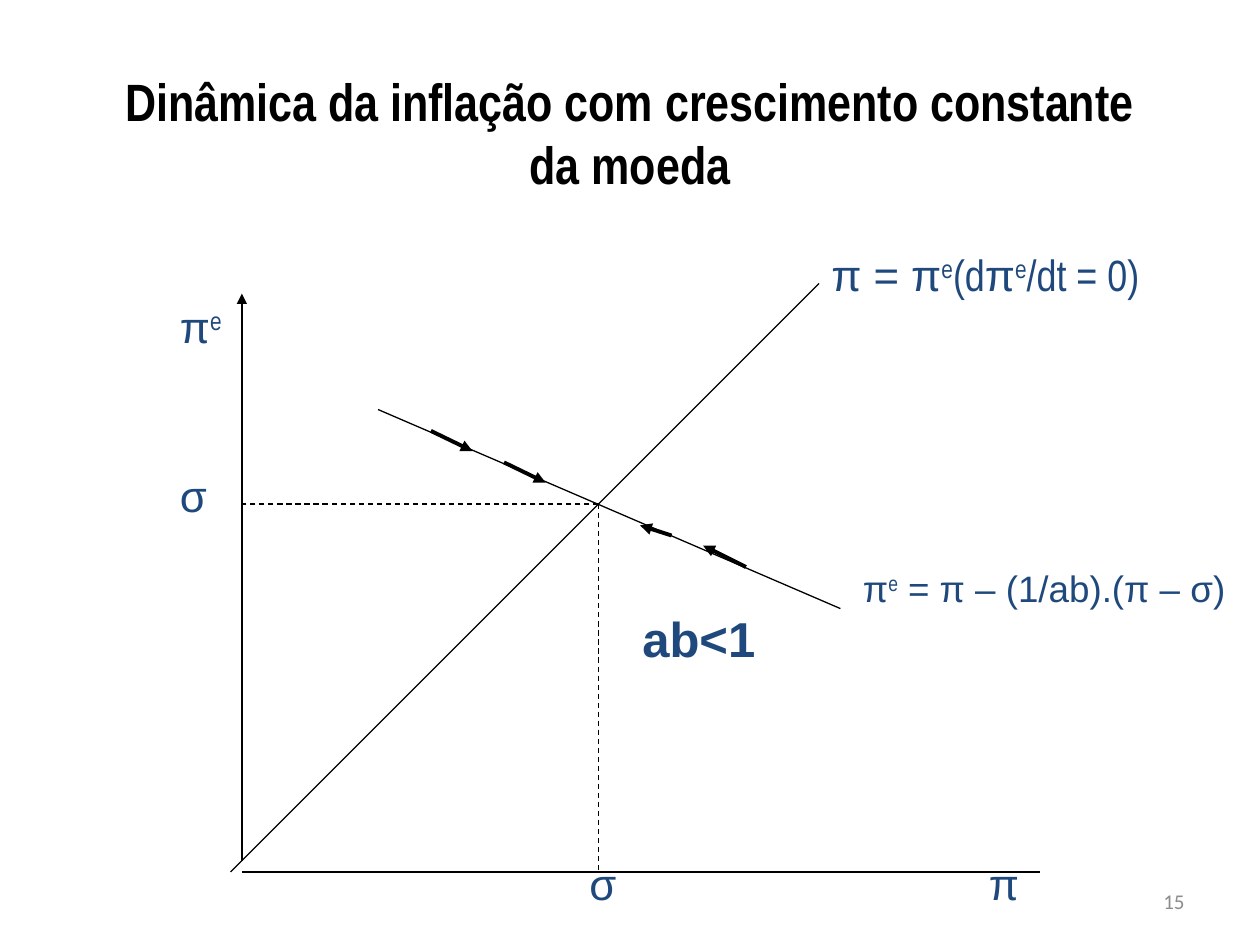
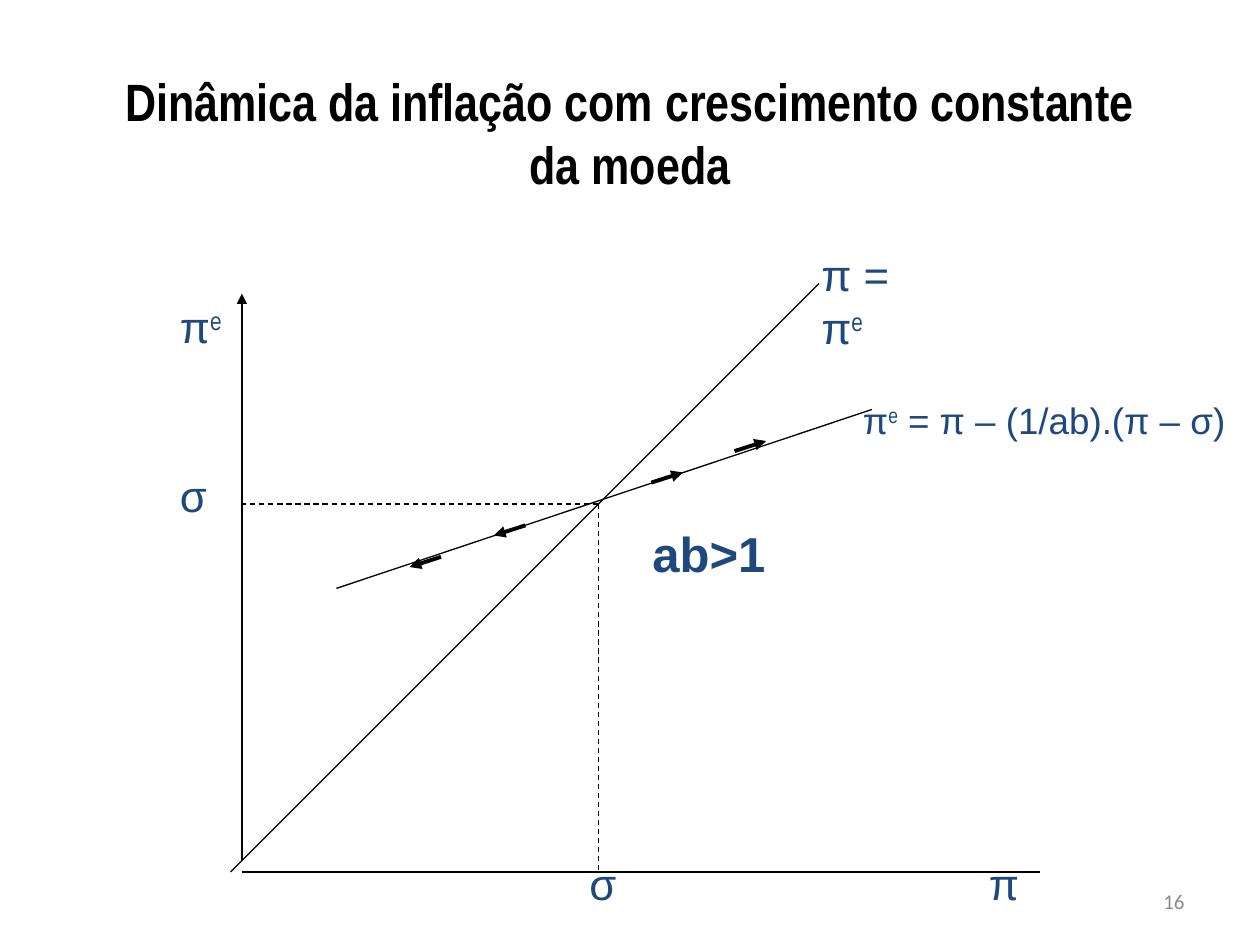
"""Build two phase diagrams of inflation under constant money growth."""
from dataclasses import dataclass

from lxml import etree
from pptx import Presentation
from pptx.dml.color import RGBColor
from pptx.enum import dml, shapes, text
from pptx.oxml.ns import qn
from pptx.slide import Slide
from pptx.util import Inches, Pt

BLACK = RGBColor(0x00, 0x00, 0x00)
BLUE = RGBColor(0x1F, 0x49, 0x7D)
GRAY = RGBColor(0x8C, 0x8C, 0x8C)
SANS, NARROW, NUMBER_FONT = "Arial", "Arial Narrow", "Calibri"
THIN, THICK = 0.75, 2.25
TITLE = "Dinâmica da inflação com crescimento constante da moeda"
AXIS_X, AXIS_Y = 1.92, 6.92
STEADY_X, STEADY_Y = 4.75, 4
LABEL_HEIGHT = 0.52


@dataclass(frozen=True)
class Term:
    """A piece of a formula, optionally in another font or raised."""
    wording: str
    font: str | None = None
    raised: bool = False


@dataclass(frozen=True)
class Label:
    """A text box; lengths in inches, size in points."""
    left: float
    top: float
    width: float
    terms: tuple[Term, ...]
    height: float = LABEL_HEIGHT
    size: float = 25
    font: str = SANS
    color: RGBColor = BLUE
    bold: bool = False
    spacing: float = 1.0
    align: text.PP_ALIGN = text.PP_ALIGN.LEFT
    anchor: text.MSO_ANCHOR = text.MSO_ANCHOR.TOP


@dataclass(frozen=True)
class Segment:
    """A straight line between two points in inches."""
    x1: float
    y1: float
    x2: float
    y2: float
    width: float = THIN
    arrow: bool = False
    dashed: bool = False


@dataclass(frozen=True)
class Diagram:
    """What differs from one slide to the other."""
    number: int
    identity: Label
    expectation_top: float
    condition: Label
    curve: Segment
    arrows: tuple[Segment, ...]


EXPECTED = Term("e", NARROW, raised=True)
PI, SIGMA = (Term("π"),), (Term("σ"),)
PI_EXPECTED = (Term("π"), EXPECTED)
IDENTITY = (Term("π = π"), EXPECTED)
STATIONARY = IDENTITY + (Term("(d", NARROW), Term("π"), EXPECTED, Term("/dt = 0)", NARROW))
EXPECTATION = PI_EXPECTED + (Term(" = π – (1/ab).(π – σ)"),)

AXES_AND_GUIDES = (
    Segment(AXIS_X, 6.83, AXIS_X, 2.33, arrow=True),
    Segment(AXIS_X, AXIS_Y, 8.25, AXIS_Y),
    Segment(1.83, AXIS_Y, 6.5, 2.25),
    Segment(STEADY_X, STEADY_Y, STEADY_X, AXIS_Y, dashed=True),
    Segment(STEADY_X, STEADY_Y, AXIS_X, STEADY_Y, dashed=True),
)
AXIS_LABELS = (
    Label(7.75, 6.75, 1.92, PI),
    Label(1.33, 2.33, 1.42, PI_EXPECTED),
    Label(1.33, 3.67, 1.42, SIGMA),
    Label(4.58, 6.75, 1.42, SIGMA),
)


def motion(x1: float, y1: float, x2: float, y2: float) -> Segment:
    """Return a thick arrow showing the direction of motion."""
    return Segment(x1, y1, x2, y2, THICK, arrow=True)


def condition(left: float, top: float, wording: str) -> Label:
    """Return the bold label stating the stability condition."""
    return Label(left, top, 4.25, (Term(wording),), size=28, bold=True, spacing=0.9)


DIAGRAMS = (
    Diagram(
        15, Label(6.5, 1.92, 3, STATIONARY), 4.48, condition(5, 4.83, "ab<1"),
        Segment(3, 3.25, 6.67, 4.83),
        (motion(5.33, 4.25, 5.08, 4.17), motion(5.92, 4.5, 5.58, 4.33),
         motion(4, 3.67, 4.33, 3.83), motion(3.42, 3.42, 3.75, 3.58)),
    ),
    Diagram(
        16, Label(6.42, 1.92, 1.08, IDENTITY), 3.15, condition(5.08, 4.16, "ab>1"),
        Segment(2.67, 4.67, 6.92, 3.25),
        (motion(5.17, 3.83, 5.42, 3.75), motion(5.83, 3.58, 6.08, 3.5),
         motion(4.17, 4.17, 3.92, 4.25), motion(3.5, 4.42, 3.25, 4.5)),
    ),
)


def draw_label(slide: Slide, label: Label) -> None:
    """Add a text box with one paragraph made of the label's terms."""
    box = slide.shapes.add_textbox(Inches(label.left), Inches(label.top),
                                   Inches(label.width), Inches(label.height))
    frame = box.text_frame
    frame.word_wrap = True
    frame.vertical_anchor = label.anchor
    paragraph = frame.paragraphs[0]
    paragraph.alignment = label.align
    paragraph.line_spacing = label.spacing
    font = paragraph.font
    font.name, font.size, font.bold = label.font, Pt(label.size), label.bold
    font.color.rgb = label.color
    for term in label.terms:
        run = paragraph.add_run()
        run.text = term.wording
        if term.font:
            run.font.name = term.font
        if term.raised:
            run._r.get_or_add_rPr().set("baseline", "30000")


def draw_segment(slide: Slide, segment: Segment) -> None:
    """Add a black straight connector, dashed or with an arrowhead."""
    connector = slide.shapes.add_connector(
        shapes.MSO_CONNECTOR.STRAIGHT, Inches(segment.x1), Inches(segment.y1),
        Inches(segment.x2), Inches(segment.y2))
    line = connector.line
    line.color.rgb = BLACK
    line.width = Pt(segment.width)
    if segment.dashed:
        line.dash_style = dml.MSO_LINE.DASH
    properties = connector._element.spPr
    if segment.arrow:
        etree.SubElement(properties.find(qn("a:ln")), qn("a:tailEnd"), type="triangle")
    etree.SubElement(properties, qn("a:effectLst"))


def draw_diagram(slide: Slide, diagram: Diagram) -> None:
    """Draw the shared title and axes, then the diagram's own elements."""
    labels = (
        Label(7.17, 6.95, 2.33, (Term(str(diagram.number)),), height=0.4, size=12,
              font=NUMBER_FONT, color=GRAY, align=text.PP_ALIGN.RIGHT,
              anchor=text.MSO_ANCHOR.MIDDLE),
        Label(0.75, 0.42, 8.5, (Term(TITLE),), height=1.25, size=30, font=NARROW,
              color=BLACK, bold=True, align=text.PP_ALIGN.CENTER,
              anchor=text.MSO_ANCHOR.MIDDLE),
        *AXIS_LABELS,
        diagram.identity,
        Label(6.75, diagram.expectation_top, 3.25, EXPECTATION, size=21, spacing=0.9),
        diagram.condition,
    )
    for segment in (*AXES_AND_GUIDES, diagram.curve, *diagram.arrows):
        draw_segment(slide, segment)
    for label in labels:
        draw_label(slide, label)


def main() -> None:
    """Create the presentation and save it."""
    presentation = Presentation()
    presentation.slide_width, presentation.slide_height = Inches(10), Inches(7.5)
    blank = presentation.slide_layouts[6]
    for diagram in DIAGRAMS:
        draw_diagram(presentation.slides.add_slide(blank), diagram)
    presentation.save("out.pptx")


if __name__ == "__main__":
    main()
